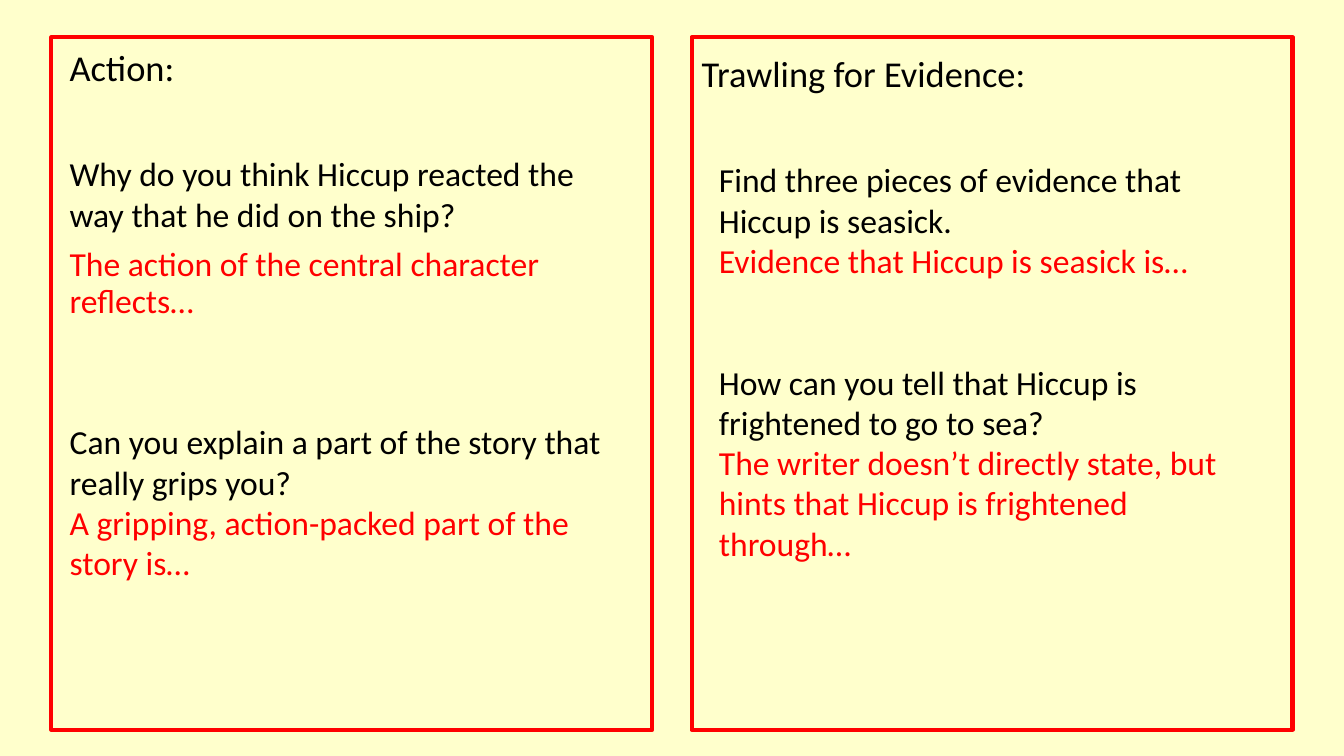
from lxml.etree import SubElement
from pptx import Presentation
from pptx.dml.color import RGBColor
from pptx.enum.shapes import MSO_SHAPE
from pptx.enum.text import MSO_ANCHOR, MSO_AUTO_SIZE
from pptx.oxml.ns import qn
from pptx.util import Inches, Pt

CREAM = RGBColor(0xFF, 0xFF, 0xCC)
RED = RGBColor(0xFF, 0x00, 0x00)
BLACK = RGBColor(0x00, 0x00, 0x00)

MARGIN, TOP = 0.51, 0.37
PANEL_W, PANEL_H = 5.96, 6.87
PITCH = 6.35

# Offsets and sizes are in inches, measured from the panel's corner.
# Each line of a body: text, colour, line spacing, space before in points.
PANELS = [
    dict(
        heading="Action:",
        heading_box=(0.08, 0.03, 5.09, 0.54),
        body_box=(0.08, 1.1, 5.7, 4.4),
        lines=[
            ("Why do you think Hiccup reacted the way that he did on the ship?", BLACK, 1, 0),
            ("The action of the central character reflects…", RED, 0.9, 10),
            ("Can you explain a part of the story that really grips you?", BLACK, 1, 72),
            ("A gripping, action-packed part of the story is…", RED, 1, 0),
        ],
    ),
    dict(
        heading="Trawling for Evidence:",
        heading_box=(0, 0.09, 5.09, 0.54),
        body_box=(0.17, 1.16, 5.3, 4.95),
        lines=[
            ("Find three pieces of evidence that Hiccup is seasick.", BLACK, 1, 0),
            ("Evidence that Hiccup is seasick is…", RED, 1, 0),
            ("How can you tell that Hiccup is frightened to go to sea?", BLACK, 1, 58),
            ("The writer doesn’t directly state, but hints that Hiccup "
             "is frightened through…", RED, 1, 0),
        ],
    ),
]


def fill_placeholder(placeholder, left, top, box, lines, size):
    """Place a placeholder inside its panel and write unbulleted lines."""
    dx, dy, width, height = box
    placeholder.left, placeholder.top = Inches(left + dx), Inches(top + dy)
    placeholder.width, placeholder.height = Inches(width), Inches(height)
    frame = placeholder.text_frame
    frame.word_wrap = True
    frame.auto_size = MSO_AUTO_SIZE.NONE
    frame.vertical_anchor = MSO_ANCHOR.TOP
    for number, (text, colour, spacing, before) in enumerate(lines):
        paragraph = frame.add_paragraph() if number else frame.paragraphs[0]
        paragraph.text = text
        properties = paragraph._p.get_or_add_pPr()
        properties.set("marL", "0")
        properties.set("indent", "0")
        SubElement(properties, qn("a:buNone"))
        paragraph.line_spacing = spacing
        paragraph.space_before = Pt(before)
        paragraph.font.name = "Calibri"
        paragraph.font.size = Pt(size)
        paragraph.font.bold = False
        paragraph.font.color.rgb = colour


def add_panel(slide, left, top, panel, heading, body):
    frame = slide.shapes.add_shape(
        MSO_SHAPE.RECTANGLE, Inches(left), Inches(top), Inches(PANEL_W), Inches(PANEL_H))
    frame.shadow.inherit = False
    frame.fill.background()
    frame.line.color.rgb = RED
    frame.line.width = Pt(3)
    fill_placeholder(heading, left, top, panel["heading_box"],
                     [(panel["heading"], BLACK, 1, 0)], 26)
    fill_placeholder(body, left, top, panel["body_box"], panel["lines"], 24)


def main():
    deck = Presentation()
    deck.slide_width, deck.slide_height = Inches(13.33), Inches(7.5)
    slide = deck.slides.add_slide(deck.slide_layouts.get_by_name("Comparison"))
    slide.background.fill.solid()
    slide.background.fill.fore_color.rgb = CREAM

    title, *halves = slide.placeholders
    title.element.getparent().remove(title.element)
    for column, panel in enumerate(PANELS):
        heading, body = halves[2 * column:2 * column + 2]
        add_panel(slide, MARGIN + column * PITCH, TOP, panel, heading, body)
    deck.save("out.pptx")


if __name__ == "__main__":
    main()
